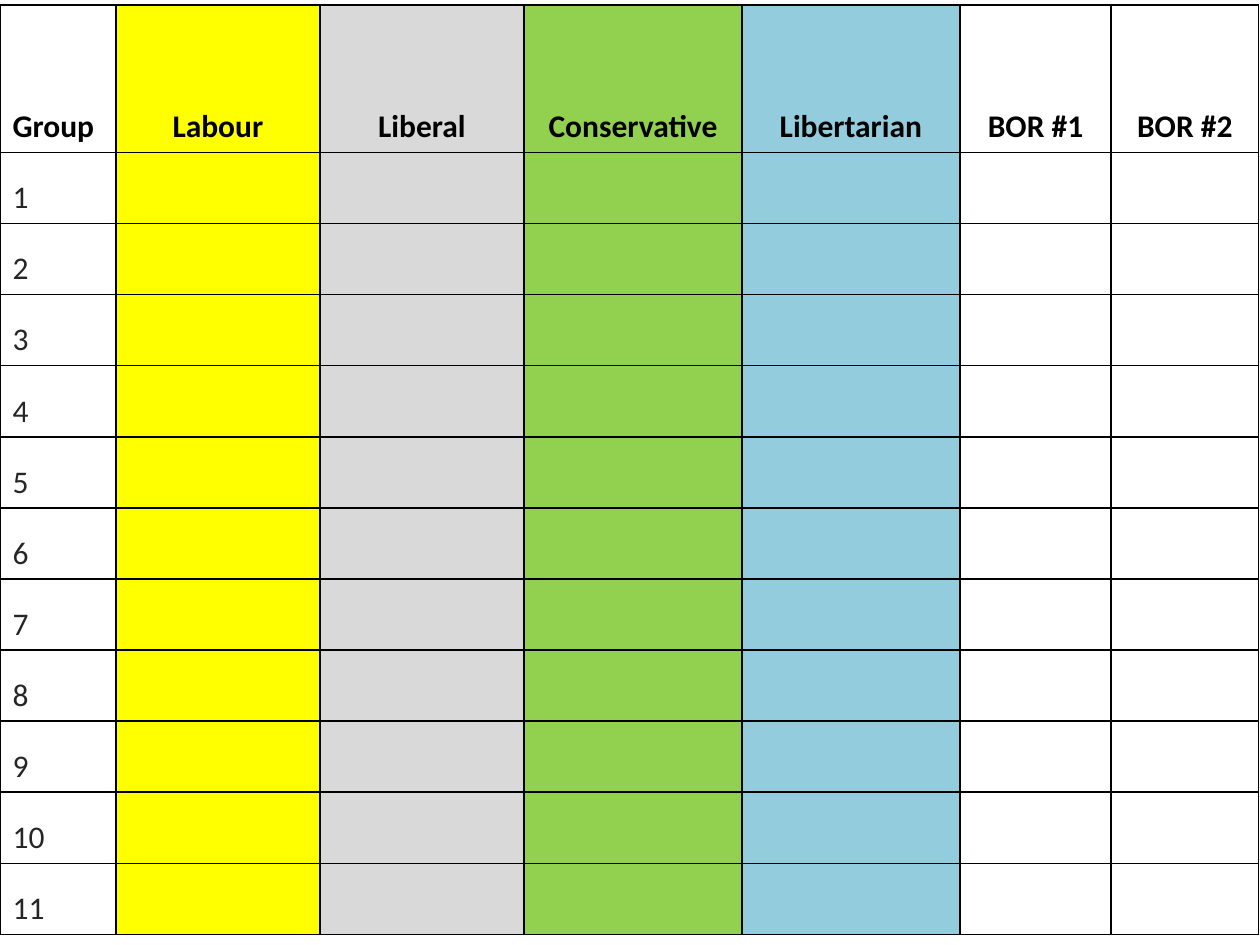
from dataclasses import dataclass
from typing import Optional

from lxml.etree import SubElement
from pptx import Presentation
from pptx.dml.color import RGBColor
from pptx.enum.text import MSO_ANCHOR as Anchor, PP_ALIGN as Align
from pptx.oxml.ns import qn
from pptx.util import Inches, Pt

BLACK = RGBColor(0x00, 0x00, 0x00)
DARK_GRAY = RGBColor(0x26, 0x26, 0x26)
YELLOW = RGBColor(0xFF, 0xFF, 0x00)
LIGHT_GRAY = RGBColor(0xD9, 0xD9, 0xD9)
GREEN = RGBColor(0x92, 0xD0, 0x50)
BLUE = RGBColor(0x93, 0xCD, 0xDD)

GROUPS = 11
TABLE_TOP = 0.04
TABLE_HEIGHT = 7.38
HEADER_HEIGHT = 1.17


@dataclass(frozen=True)
class Column:
    heading: str
    width: float
    fill: Optional[RGBColor] = None
    align: Align = Align.CENTER


COLUMNS = [
    Column("Group", 0.92, align=Align.LEFT),
    Column("Labour", 1.62, YELLOW),
    Column("Liberal", 1.62, LIGHT_GRAY),
    Column("Conservative", 1.73, GREEN),
    Column("Libertarian", 1.73, BLUE),
    Column("BOR #1", 1.2),
    Column("BOR #2", 1.17),
]


def add_borders(cell, color: RGBColor, width: float) -> None:
    tc_pr = cell._tc.get_or_add_tcPr()
    for side in ("lnL", "lnR", "lnT", "lnB"):
        ln = SubElement(tc_pr, qn(f"a:{side}"), w=str(Pt(width)))
        fill = SubElement(ln, qn("a:solidFill"))
        SubElement(fill, qn("a:srgbClr"), val=str(color))


def style_cell(cell, fill: Optional[RGBColor]) -> None:
    add_borders(cell, BLACK, 1)
    cell.vertical_anchor = Anchor.BOTTOM
    if fill is None:
        cell.fill.background()
    else:
        cell.fill.solid()
        cell.fill.fore_color.rgb = fill


def write_cell(cell, text: str, color: RGBColor, bold: bool, align: Align) -> None:
    cell.text_frame.text = text
    p = cell.text_frame.paragraphs[0]
    p.alignment = align
    font = p.runs[0].font
    font.name = "Calibri"
    font.size = Pt(18)
    font.bold = bold
    font.color.rgb = color


def add_group_table(s) -> None:
    width = sum(column.width for column in COLUMNS)
    table = s.shapes.add_table(
        GROUPS + 1, len(COLUMNS),
        Inches(0), Inches(TABLE_TOP), Inches(width), Inches(TABLE_HEIGHT),
    ).table
    table.first_row = False
    table.horz_banding = False

    for row in table.rows:
        row.height = Inches((TABLE_HEIGHT - HEADER_HEIGHT) / GROUPS)
    table.rows[0].height = Inches(HEADER_HEIGHT)

    for i, column in enumerate(COLUMNS):
        table.columns[i].width = Inches(column.width)
        for row in range(GROUPS + 1):
            style_cell(table.cell(row, i), column.fill)
        write_cell(table.cell(0, i), column.heading, BLACK, True, column.align)

    for group in range(1, GROUPS + 1):
        write_cell(table.cell(group, 0), str(group), DARK_GRAY, False, Align.LEFT)


def main() -> None:
    prs = Presentation()
    prs.slide_width = Inches(10)
    prs.slide_height = Inches(7.5)
    s = prs.slides.add_slide(prs.slide_layouts[6])
    add_group_table(s)
    prs.save("out.pptx")


if __name__ == "__main__":
    main()
